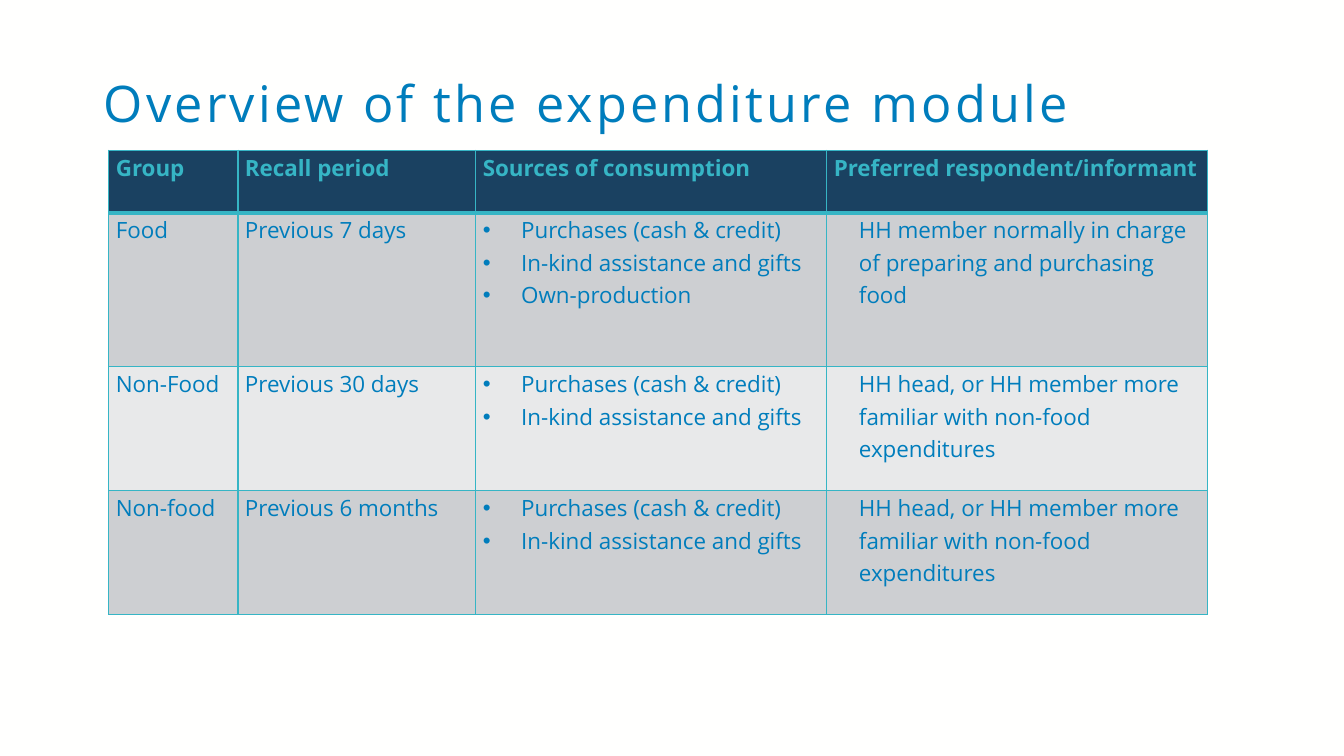
"""Build a slide with a table that summarises the expenditure module."""
from dataclasses import dataclass

from lxml.etree import SubElement
from pptx import Presentation
from pptx.dml.color import RGBColor as RGB
from pptx.enum.text import MSO_ANCHOR as Anchor, MSO_AUTO_SIZE as AutoSize, PP_ALIGN as Align
from pptx.oxml.ns import qn
from pptx.util import Inches, Pt


@dataclass(frozen=True)
class Theme:
    font: str = "Open Sans"
    paper: str = "FFFFFE"
    text: str = "007DBC"
    accent: str = "36B5C5"
    header: str = "1A4161"
    bands: tuple = ("CDCFD2", "E8E9EA")
    title_size: float = 36
    body_size: float = 16
    tracking: float = 2.3
    line: float = 1
    rule: float = 3


THEME = Theme()
WIDTH, HEIGHT = 13.33, 7.5
COLUMNS = (1.28, 2.36, 3.48, 3.78)
ROWS = (0.62, 1.53, 1.23, 1.23)
SOURCES, RESPONDENT = 2, 3
BULLET_INDENT, PLAIN_INDENT = 0.38, 0.25

HEADER = ("Group", "Recall period", "Sources of consumption", "Preferred respondent/informant")
PURCHASES = "Purchases (cash & credit)\nIn-kind assistance and gifts"
HEAD = "HH head, or HH member more familiar with non-food expenditures"
BODY = (
    ("Food", "Previous 7 days", PURCHASES + "\nOwn-production",
     "HH member normally in charge of preparing and purchasing food"),
    ("Non-Food", "Previous 30 days", PURCHASES, HEAD),
    ("Non-food", "Previous 6 months", PURCHASES, HEAD),
)


def share(x, y, w, h):
    return [Inches(round(v * side, 2)) for v, side in zip((x, y, w, h), (WIDTH, HEIGHT) * 2)]


def style_runs(p, size, color, bold=False):
    for r in p.runs:
        r.font.name = THEME.font
        r.font.size = Pt(size)
        r.font.bold = bold
        r.font.color.rgb = RGB.from_string(color)


def indent(p, left, bullet=None):
    pPr = p._p.get_or_add_pPr()
    pPr.set("marL", str(Inches(left)))
    pPr.set("indent", str(Inches(-left if bullet else 0)))
    if bullet:
        SubElement(pPr, qn("a:buFont")).set("typeface", "Arial")
        SubElement(pPr, qn("a:buChar")).set("char", bullet)


def set_borders(cell, bottom):
    tcPr = cell._tc.get_or_add_tcPr()
    for side in "LRTB":
        width = bottom if side == "B" else THEME.line
        ln = SubElement(tcPr, qn(f"a:ln{side}"), w=str(Pt(width)))
        fill = SubElement(ln, qn("a:solidFill"))
        SubElement(fill, qn("a:srgbClr")).set("val", THEME.accent)


def fill_cell(cell, text, row, col):
    is_header = row == 0
    set_borders(cell, THEME.rule if is_header else THEME.line)
    cell.fill.solid()
    fill = THEME.header if is_header else THEME.bands[(row - 1) % 2]
    cell.fill.fore_color.rgb = RGB.from_string(fill)
    cell.margin_left = cell.margin_right = Inches(0.07)
    cell.margin_top = cell.margin_bottom = 0
    cell.vertical_anchor = Anchor.TOP
    tf = cell.text_frame
    tf.text = text
    for p in tf.paragraphs:
        if not is_header and col == SOURCES:
            indent(p, BULLET_INDENT, "•")
        elif not is_header and col == RESPONDENT:
            indent(p, PLAIN_INDENT)
        p.line_spacing = 1.07
        style_runs(p, THEME.body_size, THEME.accent if is_header else THEME.text, is_header)
    tf.paragraphs[-1].space_after = Pt(8)


def add_title(s, text):
    sp = s.shapes.title
    sp.left, sp.top, sp.width, sp.height = share(0.07, 0.097, 0.865, 0.168)
    tf = sp.text_frame
    tf.text = text
    tf.word_wrap = True
    tf.auto_size = AutoSize.NONE
    tf.vertical_anchor = Anchor.TOP
    p = tf.paragraphs[0]
    p.alignment = Align.LEFT
    p.line_spacing = 0.9
    style_runs(p, THEME.title_size, THEME.text)
    for r in p.runs:
        r.font._element.set("spc", str(round(THEME.tracking * 100)))


def add_expenditure_table(s):
    place = share(0.081, 0.199, sum(COLUMNS) / WIDTH, sum(ROWS) / HEIGHT)
    table = s.shapes.add_table(len(ROWS), len(COLUMNS), *place).table
    table.horz_banding = False
    for column, width in zip(table.columns, COLUMNS):
        column.width = Inches(width)
    for row, height in zip(table.rows, ROWS):
        row.height = Inches(height)
    for i, texts in enumerate((HEADER, *BODY)):
        for j, text in enumerate(texts):
            fill_cell(table.cell(i, j), text, i, j)


def main():
    prs = Presentation()
    prs.slide_width, prs.slide_height = Inches(WIDTH), Inches(HEIGHT)
    s = prs.slides.add_slide(prs.slide_layouts[5])
    s.background.fill.solid()
    s.background.fill.fore_color.rgb = RGB.from_string(THEME.paper)
    add_title(s, "Overview of the expenditure module")
    add_expenditure_table(s)
    prs.save("out.pptx")


if __name__ == "__main__":
    main()
